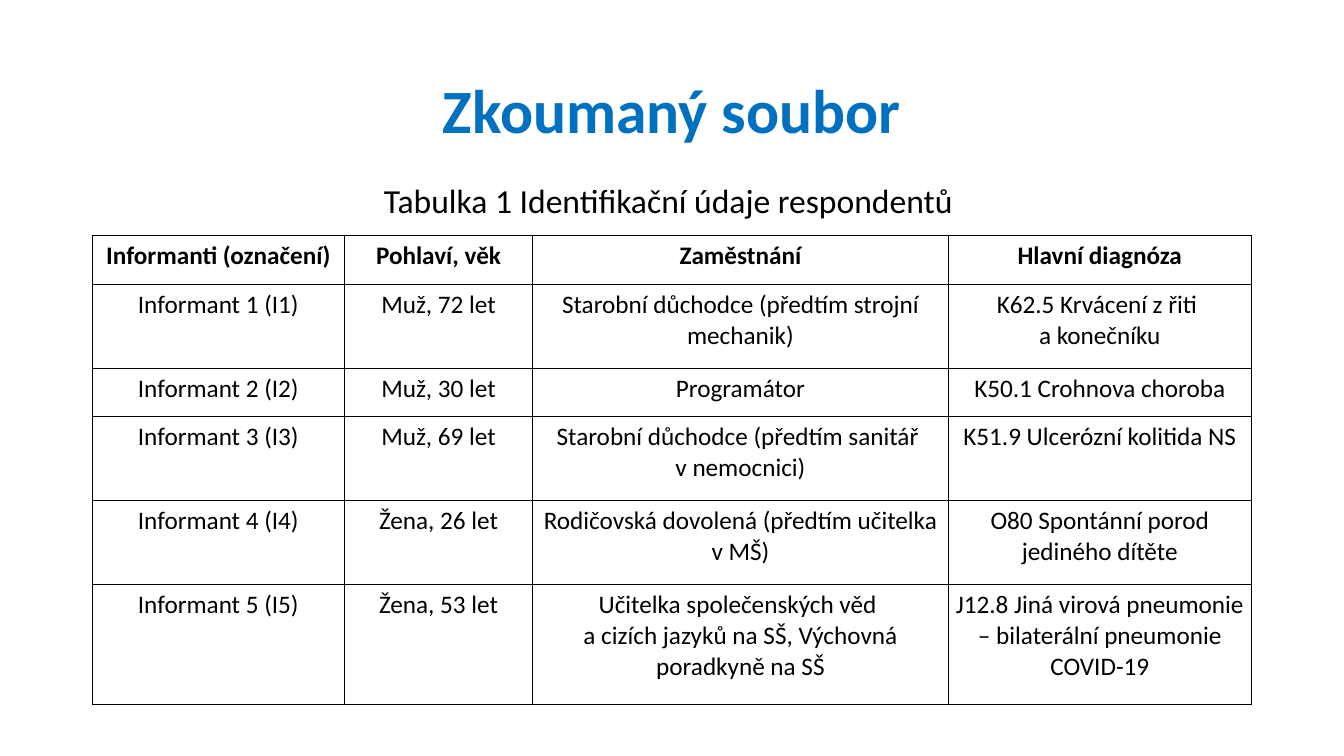
from lxml.etree import SubElement
from pptx import Presentation
from pptx.dml.color import RGBColor
from pptx.enum.text import MSO_ANCHOR, MSO_AUTO_SIZE, PP_ALIGN
from pptx.oxml.ns import qn
from pptx.util import Pt

COLORS = {"title": "0070C0", "text": "000000", "border": "000000", "cell": "FFFFFF"}
COLUMN_WIDTHS = [180, 134.6, 296.7, 216.7]
ROW_HEIGHTS = [34.6, 60, 34.6, 60, 60, 85.7]
RESPONDENTS = [
    ["Informanti (označení)", "Pohlaví, věk", "Zaměstnání", "Hlavní diagnóza"],
    ["Informant 1 (I1)", "Muž, 72 let", "Starobní důchodce (předtím strojní mechanik)",
     "K62.5 Krvácení z řiti \va konečníku"],
    ["Informant 2 (I2)", "Muž, 30 let", "Programátor", "K50.1 Crohnova choroba"],
    ["Informant 3 (I3)", "Muž, 69 let", "Starobní důchodce (předtím sanitář \vv nemocnici)",
     "K51.9 Ulcerózní kolitida NS"],
    ["Informant 4 (I4)", "Žena, 26 let", "Rodičovská dovolená (předtím učitelka v MŠ)",
     "O80 Spontánní porod jediného dítěte"],
    ["Informant 5 (I5)", "Žena, 53 let",
     "Učitelka společenských věd \va cizích jazyků na SŠ, Výchovná poradkyně na SŠ",
     "J12.8 Jiná virová pneumonie – bilaterální pneumonie COVID-19"],
]


class SlideBuilder:
    def __init__(self, page, font_name):
        self.page = page
        self.font_name = font_name

    def set_text(self, frame, text, size, color="text", bold=False, align=PP_ALIGN.CENTER):
        para = frame.paragraphs[0]
        para.text = text
        para.alignment = align
        font = para.font
        font.name = self.font_name
        font.size = Pt(size)
        font.bold = bold
        font.color.rgb = RGBColor.from_string(COLORS[color])
        return para

    def title(self, text, left, top, width, height):
        box = self.page.shapes.title
        box.left, box.top, box.width, box.height = Pt(left), Pt(top), Pt(width), Pt(height)
        box.text_frame.vertical_anchor = MSO_ANCHOR.MIDDLE
        para = self.set_text(box.text_frame, text, 44, "title", True)
        para.line_spacing = 0.9

    def caption(self, text, left, top, width, height):
        box = self.page.shapes.add_textbox(Pt(left), Pt(top), Pt(width), Pt(height))
        box.text_frame.word_wrap = False
        box.text_frame.auto_size = MSO_AUTO_SIZE.SHAPE_TO_FIT_TEXT
        self.set_text(box.text_frame, text, 24, align=PP_ALIGN.LEFT)

    def border(self, cell):
        properties = cell._tc.get_or_add_tcPr()
        for side in ("lnL", "lnR", "lnT", "lnB"):
            line = SubElement(properties, qn(f"a:{side}"), w=str(Pt(1)))
            fill = SubElement(line, qn("a:solidFill"))
            SubElement(fill, qn("a:srgbClr"), val=COLORS["border"])

    def table(self, rows, left, top, widths, heights):
        frame = self.page.shapes.add_table(
            len(rows), len(widths), Pt(left), Pt(top), Pt(sum(widths)), Pt(sum(heights)))
        table = frame.table
        table.first_row = False
        table.horz_banding = False
        for column, width in zip(table.columns, widths):
            column.width = Pt(width)
        for row_index, (row, height) in enumerate(zip(table.rows, heights)):
            row.height = Pt(height)
            for cell, text in zip(row.cells, rows[row_index]):
                cell.margin_left = cell.margin_right = Pt(5.4)
                self.border(cell)
                cell.fill.solid()
                cell.fill.fore_color.rgb = RGBColor.from_string(COLORS["cell"])
                self.set_text(cell.text_frame, text, 18, bold=row_index == 0)


def main():
    deck = Presentation()
    deck.slide_width, deck.slide_height = Pt(960), Pt(540)
    page = deck.slides.add_slide(deck.slide_layouts[5])
    builder = SlideBuilder(page, "Calibri")
    builder.title("Zkoumaný soubor", 66, 28.8, 828, 104.4)
    builder.table(RESPONDENTS, 66, 168.5, COLUMN_WIDTHS, ROW_HEIGHTS)
    builder.caption("Tabulka 1 Identifikační údaje respondentů", 267.1, 125.3, 425.5, 36)
    deck.save("out.pptx")


if __name__ == "__main__":
    main()
